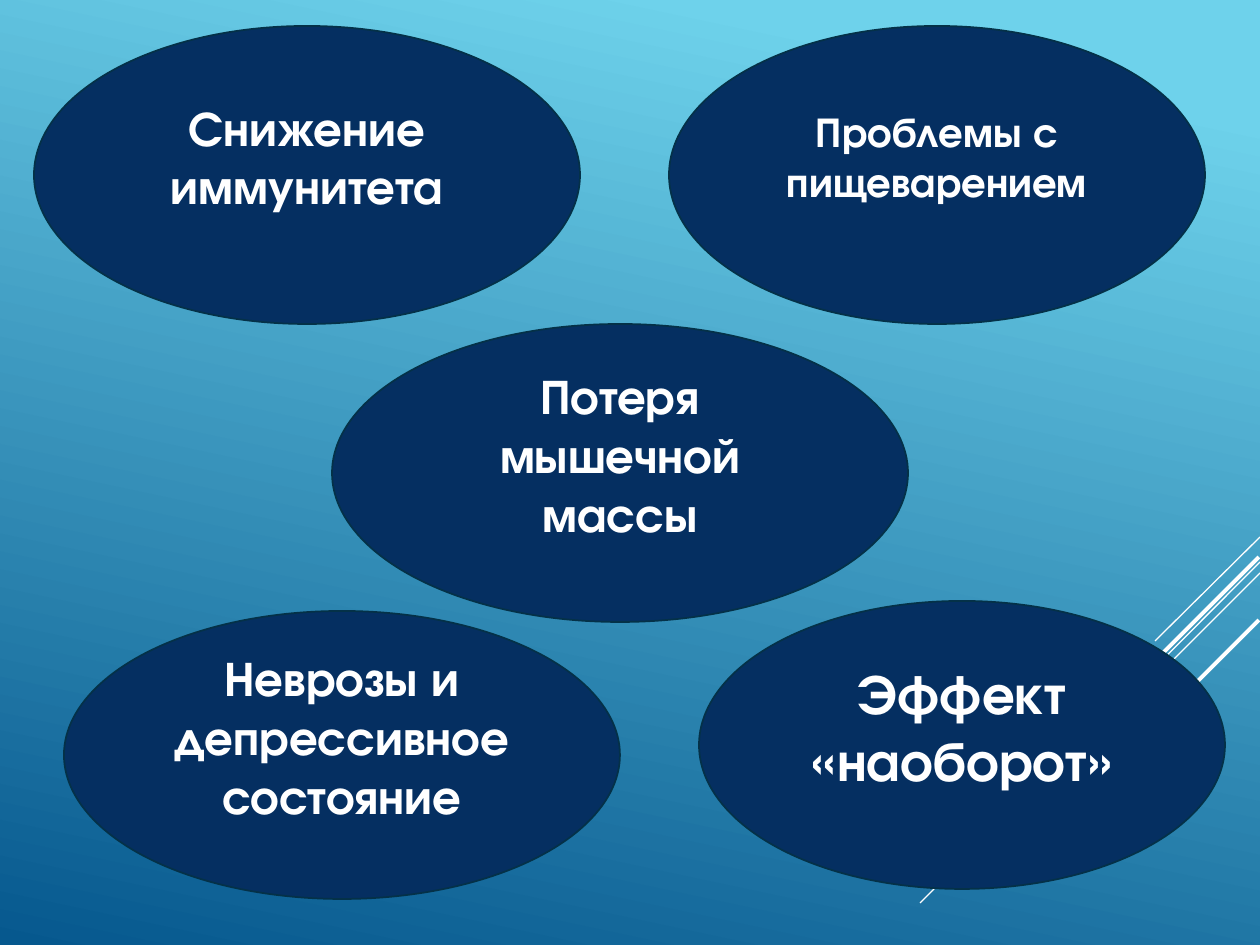
from pptx import Presentation, util as u
from pptx.dml.color import RGBColor
from pptx.enum import shapes, text
from pptx.oxml.ns import qn
from lxml import etree

PX = 914400 / 126
THEME = {
    "font": "TeX Gyre Adventor",
    "sky": "6ED2EB", "deep": "06588E",
    "oval": "052F61", "edge": "043148", "white": "FFFFFF",
    "large": 32, "medium": 28, "small": 24,
    "thin": 0.75, "thick": 2.25, "outline": 1,
}


def px(*lengths):
    return [u.Emu(round(length * PX)) for length in lengths]


def color(name):
    return RGBColor.from_string(THEME[name])


deck = Presentation()
deck.slide_width, deck.slide_height = px(1260, 945)
page = deck.slides.add_slide(deck.slide_layouts[6])

backdrop = page.background.fill
backdrop.gradient()
backdrop.gradient_angle = 258
for stop, (position, name) in zip(backdrop.gradient_stops, [(0.1, "sky"), (1, "deep")]):
    stop.position = position
    stop.color.rgb = color(name)

# Diagonal rays: right end x and y, left end x and y, weight
rays = [
    (1260, 537, 1155, 641, "thin"),
    (1260, 562, 920, 903, "thin"),
    (1260, 573, 1043, 790, "thin"),
    (1259, 557, 1061, 755, "thick"),
    (1259, 620, 1115, 764, "thick"),
]
for *ends, weight in rays:
    ray = page.shapes.add_connector(shapes.MSO_CONNECTOR.STRAIGHT, *px(*ends))
    ray.line.color.rgb = color("white")
    ray.line.width = u.Pt(THEME[weight])
    etree.SubElement(ray._element.spPr, qn("a:effectLst"))

# Effects: left, top, width, height, wording, type size
effects = [
    (34, 26, 546, 298, "Снижение иммунитета", "medium"),
    (332, 324, 576, 298, "Потеря мышечной массы", "medium"),
    (699, 601, 526, 288, "Эффект «наоборот»", "large"),
    (64, 611, 556, 288, "Неврозы и депрессивное состояние", "medium"),
    (669, 26, 536, 298, "Проблемы с пищеварением", "small"),
]
# The deeper bottom margin lifts the wording above the middle
side, top, bottom = px(13, 6, 44)
frame_format = {
    "margin_left": side, "margin_right": side,
    "margin_top": top, "margin_bottom": bottom,
    "word_wrap": True, "vertical_anchor": text.MSO_ANCHOR.MIDDLE,
}
for *place, wording, size in effects:
    oval = page.shapes.add_shape(shapes.MSO_SHAPE.OVAL, *px(*place))
    oval.shadow.inherit = False
    oval.fill.solid()
    oval.fill.fore_color.rgb = color("oval")
    oval.line.color.rgb = color("edge")
    oval.line.width = u.Pt(THEME["outline"])
    for name, value in frame_format.items():
        setattr(oval.text_frame, name, value)
    para = oval.text_frame.paragraphs[0]
    para.alignment = text.PP_ALIGN.CENTER
    span = para.add_run()
    span.text = wording
    span_format = {"name": THEME["font"], "size": u.Pt(THEME[size]), "bold": True}
    for name, value in span_format.items():
        setattr(span.font, name, value)
    span.font.color.rgb = color("white")

deck.save("out.pptx")
